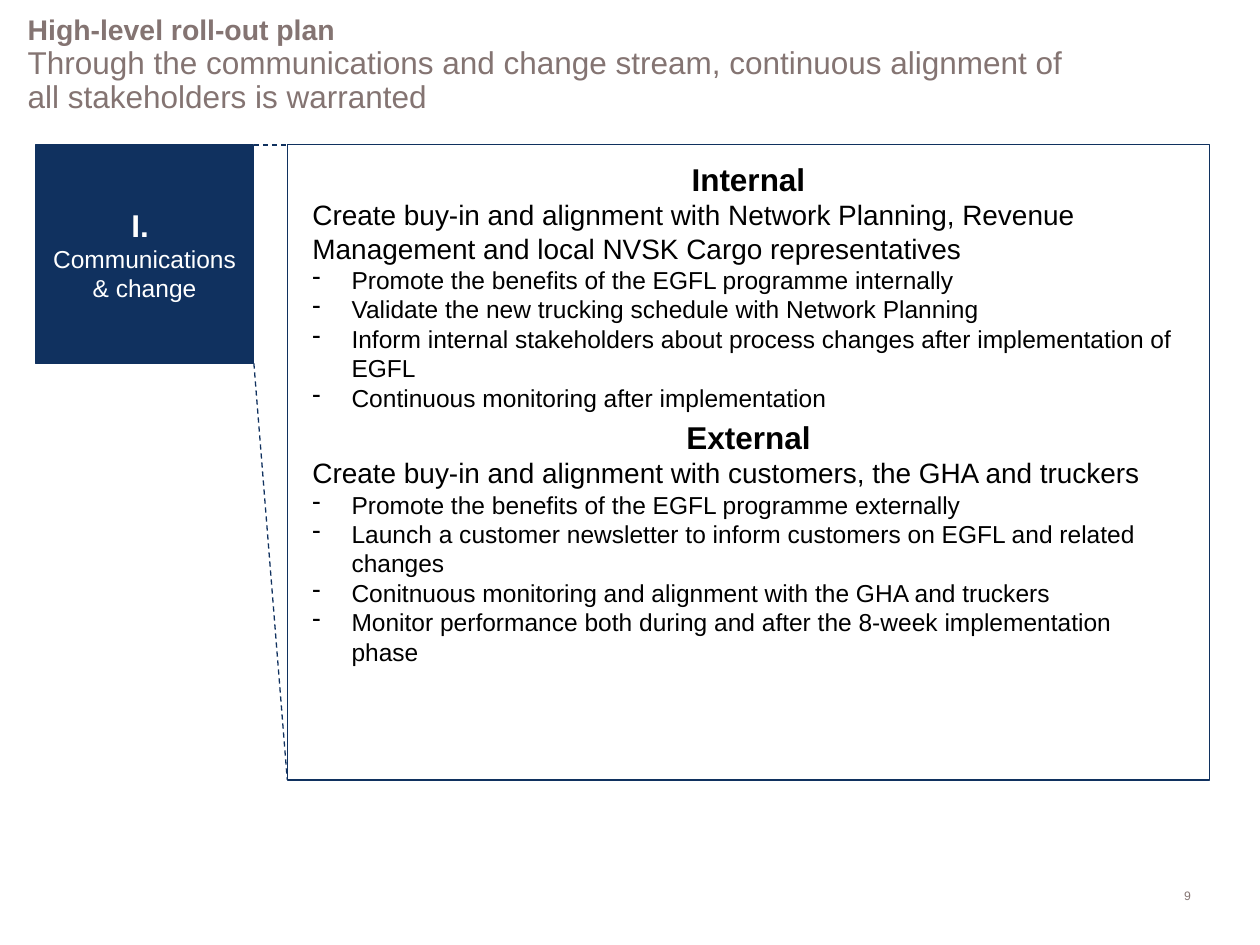
from pptx import Presentation
from pptx.dml.color import RGBColor
from pptx.enum.dml import MSO_LINE
from pptx.enum.shapes import MSO_CONNECTOR, MSO_SHAPE
from pptx.enum.text import MSO_ANCHOR, PP_ALIGN
from pptx.oxml.ns import qn
from pptx.util import Inches, Pt
from lxml.etree import SubElement

NAVY = RGBColor(0x10, 0x31, 0x5F)
TAUPE = RGBColor(0x84, 0x74, 0x72)
WHITE = RGBColor(0xFF, 0xFF, 0xFF)
BLACK = RGBColor(0, 0, 0)
COLS, ROWS = 100, 75

STREAMS = [
    ("Internal",
     "Create buy-in and alignment with Network Planning, Revenue Management "
     "and local NVSK Cargo representatives",
     ["Promote the benefits of the EGFL programme internally",
      "Validate the new trucking schedule with Network Planning",
      "Inform internal stakeholders about process changes after "
      "implementation of EGFL",
      "Continuous monitoring after implementation"]),
    ("External",
     "Create buy-in and alignment with customers, the GHA and truckers",
     ["Promote the benefits of the EGFL programme externally",
      "Launch a customer newsletter to inform customers on EGFL and related "
      "changes",
      "Conitnuous monitoring and alignment with the GHA and truckers",
      "Monitor performance both during and after the 8-week implementation "
      "phase"]),
]


class Deck:
    """Holds the style and the current slide; lengths are grid columns and rows."""

    font = "Arial"

    def __init__(self):
        self.file = Presentation()
        self.file.slide_width, self.file.slide_height = Inches(10), Inches(7.5)
        self.slide = self.file.slides.add_slide(self.file.slide_layouts[5])
        self.shapes = self.slide.shapes

    def grid(self, *spans):
        """Turn alternating columns and rows into lengths."""
        units = (self.file.slide_width / COLS, self.file.slide_height / ROWS)
        return [round(n * units[i % 2]) for i, n in enumerate(spans)]

    def style(self, font, size, color, bold=False):
        font.name, font.size, font.bold = self.font, Pt(size), bold
        font.color.rgb = color

    def inset(self, frame, side, top):
        frame.word_wrap = True
        frame.margin_left = frame.margin_right = Inches(side)
        frame.margin_top = frame.margin_bottom = Inches(top)

    def title(self, area, head, text):
        box = self.shapes.title
        box.left, box.top, box.width, box.height = self.grid(*area)
        frame = box.text_frame
        self.inset(frame, 0.1, 0.05)
        frame.vertical_anchor = MSO_ANCHOR.MIDDLE
        para = frame.paragraphs[0]
        para.alignment, para.line_spacing = PP_ALIGN.LEFT, 0.9
        for words, size, bold in ((head, 16.2, True), (text, 18, False)):
            if para.runs:
                para.add_line_break()
            run = para.add_run()
            run.text = words
            self.style(run.font, size, TAUPE, bold)

    def line(self, *ends):
        line = self.shapes.add_connector(MSO_CONNECTOR.STRAIGHT, *self.grid(*ends))
        line.line.color.rgb, line.line.width = NAVY, Pt(0.75)
        line.line.dash_style = MSO_LINE.DASH
        SubElement(line._element.spPr, qn("a:effectLst"))

    def box(self, area, fill, side, top, anchor):
        box = self.shapes.add_shape(MSO_SHAPE.RECTANGLE, *self.grid(*area))
        box.shadow.inherit = False
        box.fill.solid()
        box.fill.fore_color.rgb = fill
        box.line.color.rgb, box.line.width = NAVY, Pt(0.75)
        self.inset(box.text_frame, side, top)
        box.text_frame.vertical_anchor = anchor
        return box.text_frame

    def para(self, frame, text, size, color=BLACK, bold=False,
             align=PP_ALIGN.LEFT, dash=False, gap=0):
        first = frame.paragraphs[0]
        para = frame.add_paragraph() if first.runs else first
        para.add_run().text = text
        para.alignment = align
        if gap:
            para.space_before = Pt(gap)
        if dash:
            props = para._p.get_or_add_pPr()
            props.set("marL", str(Inches(0.31)))
            props.set("indent", str(-Inches(0.31)))
            SubElement(props, qn("a:buChar")).set("char", "-")
        self.style(para.font, size, color, bold)

    def note(self, area, text, size, color):
        box = self.shapes.add_textbox(*self.grid(*area))
        self.inset(box.text_frame, 0.1, 0.05)
        self.para(box.text_frame, text, size, color, align=PP_ALIGN.RIGHT)


def main():
    deck = Deck()
    mid = PP_ALIGN.CENTER
    left, top, side = 2.8, 11.5, 17.35
    edge, wide, high = 22.8, 73.2, 50.4
    right = left + side

    deck.title((1.2, 1.3, 86.2, 7.8), "High-level roll-out plan",
               "Through the communications and change stream, continuous "
               "alignment of all stakeholders is warranted")
    deck.line(right, top, edge, top)
    deck.line(right, top + side, edge, top + high)

    stream = deck.box((left, top, side, side), NAVY, 0.1, 0.05, MSO_ANCHOR.MIDDLE)
    deck.para(stream, "I. ", 18, WHITE, True, mid)
    deck.para(stream, "Communications & change", 14, WHITE, align=mid)

    plan = deck.box((edge, top, wide, high), WHITE, 0.2, 0.12, MSO_ANCHOR.TOP)
    for i, (name, goal, steps) in enumerate(STREAMS):
        deck.para(plan, name, 18, bold=True, align=mid, gap=3.5 * i)
        deck.para(plan, goal, 16)
        for step in steps:
            deck.para(plan, step, 14, dash=True)

    deck.note((87.4, 70, 8.1, 2.2), "9", 7, TAUPE)
    deck.file.save("out.pptx")


if __name__ == "__main__":
    main()
